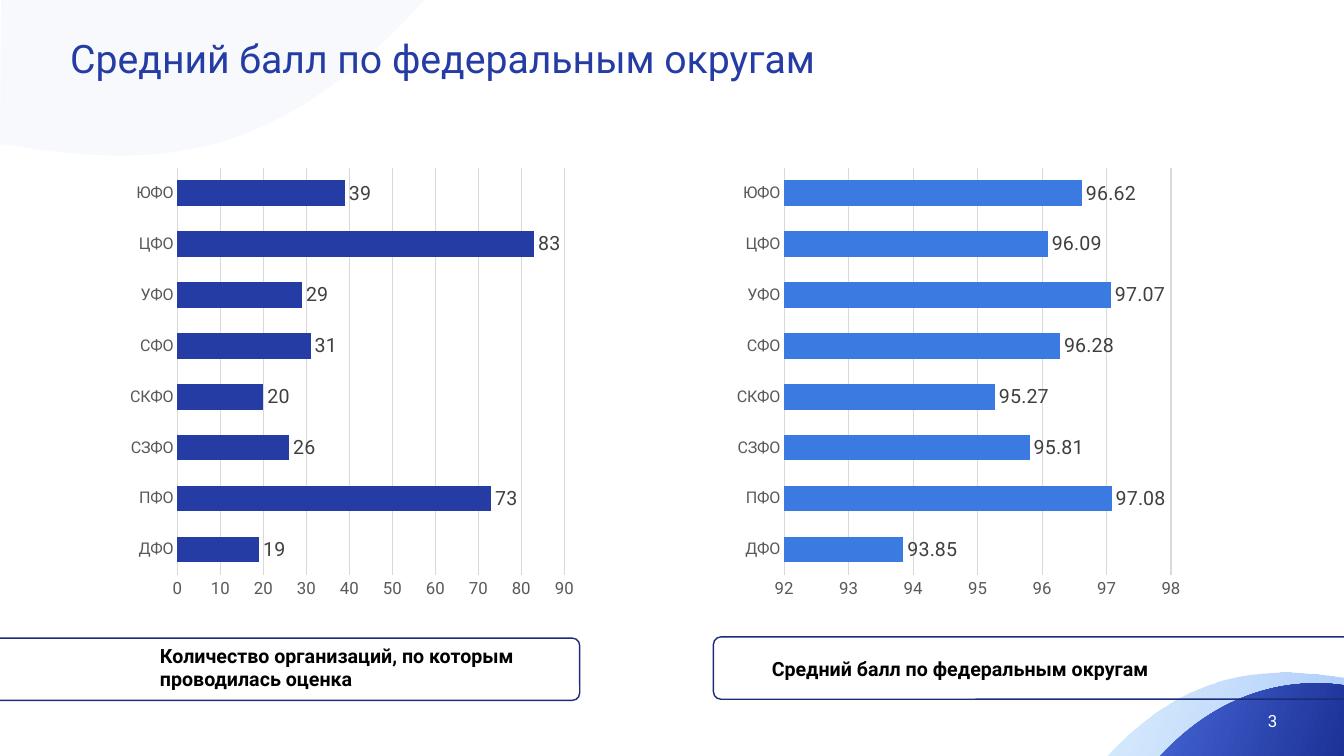
from dataclasses import dataclass

from lxml import etree
from pptx import Presentation
from pptx.chart import data as cd
from pptx.dml import color as col
from pptx.enum import chart as ch, shapes as sh, text as tx
from pptx.oxml import ns
from pptx.util import Cm, Pt


@dataclass(frozen=True)
class Theme:
    font: str = "Roboto"
    navy: str = "243CA3"
    blue: str = "3A7AE1"
    edge: str = "1B2C79"
    black: str = "000000"
    white: str = "FFFFFF"
    grey: str = "595959"
    dark: str = "404040"
    grid: str = "D9D9D9"
    title: float = 28
    body: float = 14
    small: float = 12
    cat: float = 11.5


T = Theme()
AREAS = ["ДФО", "ПФО", "СЗФО", "СКФО", "СФО", "УФО", "ЦФО", "ЮФО"]
COUNTS = [19, 73, 26, 20, 31, 29, 83, 39]
SCORES = [93.85, 97.08, 95.81, 95.27, 96.28, 97.07, 96.09, 96.62]


def rgb(code):
    return col.RGBColor.from_string(code)


def style(font, size, color, bold=False):
    font.name, font.size, font.bold = T.font, Pt(size), bold
    font.color.rgb = rgb(color)


def curve(a, b, c, d, steps=40):
    """Points along a cubic curve from a to d."""
    for i in range(steps + 1):
        t = i / steps
        s = 1 - t
        yield tuple(s**3 * p + 3 * s * s * t * q + 3 * s * t * t * r + t**3 * e
                    for p, q, r, e in zip(a, b, c, d))


def wave(slide, bend, corner, colors, alphas):
    """Curved corner with a flat fill or a two-stop gradient."""
    pts = [(Cm(x), Cm(y)) for x, y in [*curve(*bend), corner]]
    pen = slide.shapes.build_freeform(*pts[0])
    pen.add_line_segments(pts[1:])
    shape = pen.convert_to_shape()
    shape.shadow.inherit = False
    shape.line.fill.background()
    fill = shape.fill
    if len(colors) == 1:
        fill.solid()
        fill.fore_color.rgb = rgb(colors[0])
    else:
        fill.gradient()
        fill.gradient_angle = 340
        for stop, code in zip(fill.gradient_stops, colors):
            stop.color.rgb = rgb(code)
    tones = shape._element.spPr.iter(ns.qn("a:srgbClr"))
    for tone, alpha in zip(list(tones), alphas):
        etree.SubElement(tone, ns.qn("a:alpha")).set("val", str(alpha * 1000))


def label(slide, box, words, size, color, bold=False, mid=False):
    shape = slide.shapes.add_textbox(*map(Cm, box))
    frame = shape.text_frame
    frame.word_wrap = True
    frame.vertical_anchor = tx.MSO_ANCHOR.MIDDLE if mid else tx.MSO_ANCHOR.TOP
    frame.text = words
    para = frame.paragraphs[0]
    style(para.runs[0].font, size, color, bold)
    return para


def frame(slide, box):
    shape = slide.shapes.add_shape(sh.MSO_SHAPE.ROUNDED_RECTANGLE,
                                   *map(Cm, box))
    shape.adjustments[0] = 0.12
    shape.shadow.inherit = False
    shape.fill.background()
    shape.line.color.rgb = rgb(T.edge)
    shape.line.width = Pt(1)


def place(chart, x, y, w, h):
    """Fix the inner plot area as shares of the chart."""
    area = chart._chartSpace.chart.plotArea
    for old in area.findall(ns.qn("c:layout")):
        area.remove(old)
    layout = etree.Element(ns.qn("c:layout"))
    area.insert(0, layout)
    man = etree.SubElement(layout, ns.qn("c:manualLayout"))
    parts = dict(layoutTarget="inner", xMode="edge", yMode="edge",
                 x=x, y=y, w=w, h=h)
    for key, val in parts.items():
        etree.SubElement(man, ns.qn(f"c:{key}")).set("val", str(val))


def bars(slide, left, name, vals, color, low, high, step):
    data = cd.CategoryChartData()
    data.categories = AREAS
    data.add_series(name, vals)
    chart = slide.shapes.add_chart(
        ch.XL_CHART_TYPE.BAR_CLUSTERED, Cm(left), Cm(3.89), Cm(11.89),
        Cm(11.28), data).chart
    chart.has_legend = chart.has_title = False
    style(chart.font, 10, T.black)
    place(chart, 0.15, 0.03, 0.82, 0.91)

    # Axes
    cat, val = chart.category_axis, chart.value_axis
    for axis, size in ((cat, T.cat), (val, T.small)):
        axis.major_tick_mark = axis.minor_tick_mark = ch.XL_TICK_MARK.NONE
        style(axis.tick_labels.font, size, T.grey)
    val.minimum_scale, val.maximum_scale, val.major_unit = low, high, step
    val.format.line.fill.background()
    cat.has_major_gridlines = False
    for line in (cat.format.line, val.major_gridlines.format.line):
        line.color.rgb = rgb(T.grid)
        line.width = Pt(0.75)

    # Bars and their values
    plot = chart.plots[0]
    plot.gap_width, plot.overlap, plot.vary_by_categories = 100, -50, False
    fill = plot.series[0].format.fill
    fill.solid()
    fill.fore_color.rgb = rgb(color)
    plot.has_data_labels = True
    tags = plot.data_labels
    tags.show_value = True
    tags.position = ch.XL_LABEL_POSITION.OUTSIDE_END
    style(tags.font, T.body, T.dark)


def main():
    deck = Presentation()
    deck.slide_width, deck.slide_height = Cm(33.87), Cm(19.05)
    slide = deck.slides.add_slide(deck.slide_layouts[6])

    # Corner waves
    wave(slide, [(10.72, -0.03), (6.76, 4.39), (3.63, 4.19), (0, 3.63)],
         (0.03, -0.08), [T.blue], [4])
    wave(slide, [(27.86, 19.08), (30.05, 16.71), (32.21, 16.84),
                 (33.86, 17.09)],
         (33.91, 19.05), ["3998F5", "2D7AF7"], [19, 39])
    wave(slide, [(29.24, 19.05), (30.84, 17.32), (32.64, 17.09),
                 (33.87, 17.27)],
         (33.86, 19.05), ["4565D4", "1C3297"], [100, 100])

    # Title and page number
    topic = "Средний балл по федеральным округам"
    head = label(slide, (1.52, 0.33, 22.53, 2.41), topic, T.title, T.navy,
                 mid=True)
    head.line_spacing = 0.9
    page = label(slide, (23.93, 17.65, 8.51, 1.02), "3", T.small, T.white,
                 mid=True)
    page.alignment = tx.PP_ALIGN.RIGHT

    # Charts with captions
    count = "Количество организаций, по которым проводилась оценка"
    bars(slide, 2.69, count, COUNTS, T.navy, 0, 90, 10)
    label(slide, (3.78, 16.1, 10.01, 1.45), count, T.body, T.black, bold=True)
    frame(slide, (-0.81, 16.08, 15.42, 1.57))
    bars(slide, 17.98, topic, SCORES, T.blue, 92, 98, 1)
    label(slide, (19.2, 16.43, 10.01, 0.86), topic, T.body, T.black, bold=True)
    frame(slide, (17.98, 16.05, 16.18, 1.57))

    deck.save("out.pptx")


if __name__ == "__main__":
    main()
